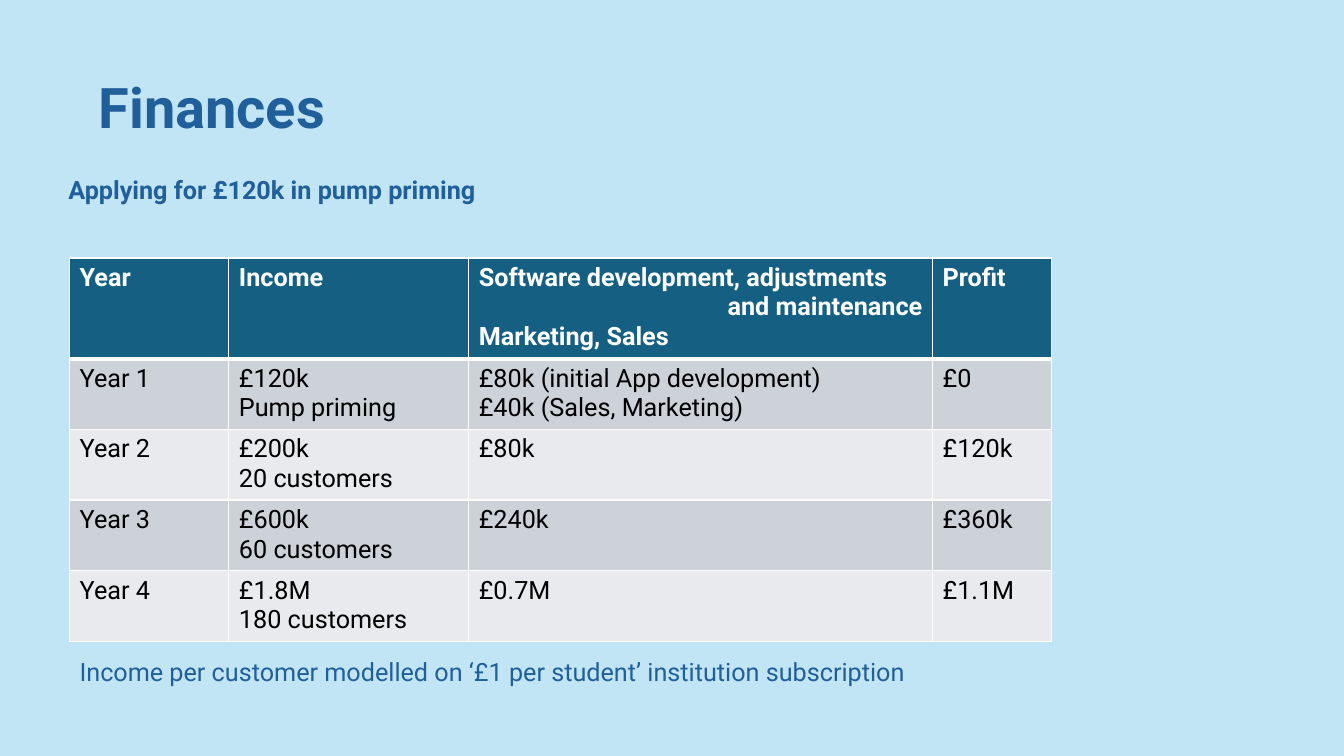
import pptx
import pptx.util
import pptx.dml.color
import pptx.enum.text
import pptx.oxml.ns
from lxml import etree

INK = {
    "sky": "C1E5F5",
    "blue": "215F9A",
    "head": "156082",
    "odd": "CCD2D8",
    "even": "E8EAED",
    "white": "FFFFFF",
    "black": "000000",
}
FONT = "Roboto"
ALIGN = pptx.enum.text.PP_ALIGN
ANCHOR = pptx.enum.text.MSO_ANCHOR

COLS = [11.85, 17.85, 34.51, 8.85]
HEAD_ROW, BODY_ROW = 13.05, 9.14
HEADS = ["Year", "Income",
         "Software development, adjustments\nand maintenance\nMarketing, Sales",
         "Profit"]
YEARS = [
    ["Year 1", "£120k\nPump priming",
     "£80k (initial App development)\n£40k (Sales, Marketing)", "£0"],
    ["Year 2", "£200k\n20 customers", "£80k", "£120k"],
    ["Year 3", "£600k\n60 customers", "£240k", "£360k"],
    ["Year 4", "£1.8M\n180 customers", "£0.7M", "£1.1M"],
]


def tint(name):
    return pptx.dml.color.RGBColor.from_string(INK[name])


def write(frame, text, size=18, color="blue", bold=False, space=None):
    """Put each line of the text in its own paragraph."""
    frame.word_wrap = True
    for i, line in enumerate(text.split("\n")):
        para = frame.paragraphs[0] if i == 0 else frame.add_paragraph()
        para.line_spacing = space
        run = para.add_run()
        run.text = line
        font = run.font
        font.name, font.size, font.bold = FONT, pptx.util.Pt(size), bold
        font.color.rgb = tint(color)


def edge(cell, side, width):
    """Draw one white border; side is L, R, T or B."""
    name = pptx.oxml.ns.qn
    line = etree.SubElement(cell._tc.get_or_add_tcPr(), name(f"a:ln{side}"),
                            w=str(pptx.util.Pt(width)))
    fill = etree.SubElement(line, name("a:solidFill"))
    etree.SubElement(fill, name("a:srgbClr"), val=INK["white"])


class Deck:
    """Holds the slide; all lengths are hundredths of its width or height."""

    def __init__(self):
        self.show = pptx.Presentation()
        self.show.slide_width = pptx.util.Inches(13.33)
        self.show.slide_height = pptx.util.Inches(7.5)
        self.slide = self.show.slides.add_slide(self.show.slide_layouts[6])
        back = self.slide.background.fill
        back.solid()
        back.fore_color.rgb = tint("sky")

    def wide(self, cols):
        return round(self.show.slide_width * cols / 100)

    def high(self, rows):
        return round(self.show.slide_height * rows / 100)

    def area(self, x, y, w, h):
        return self.wide(x), self.high(y), self.wide(w), self.high(h)

    def text(self, box, text, anchor=ANCHOR.TOP, **form):
        frame = self.slide.shapes.add_textbox(*self.area(*box)).text_frame
        frame.vertical_anchor = anchor
        write(frame, text, space=0.9, **form)

    def table(self, x, y, cols, rows, data):
        """Add a table with a dark head row and banded rows below it."""
        box = self.area(x, y, sum(cols), sum(rows))
        grid = self.slide.shapes.add_table(len(rows), len(cols), *box).table
        for col, w in zip(grid.columns, cols):
            col.width = self.wide(w)
        for r, (h, line) in enumerate(zip(rows, data)):
            grid.rows[r].height = self.high(h)
            for c, text in enumerate(line):
                self.cell(grid.cell(r, c), r, text)
        return grid

    def cell(self, cell, row, text):
        head = row == 0
        edges = {"L": 1, "R": 1, "T": 3 if row == 1 else 1, "B": 3 if head else 1}
        for side, width in edges.items():
            edge(cell, side, width)
        cell.fill.solid()
        band = "odd" if row % 2 else "even"
        cell.fill.fore_color.rgb = tint("head" if head else band)
        write(cell.text_frame, text, bold=head, color="white" if head else "black")


def main():
    deck = Deck()
    deck.text((6.6, 4.93, 28, 19.33), "Finances", anchor=ANCHOR.MIDDLE,
              size=40, bold=True)
    deck.text((5.18, 86.67, 63.4, 9.47),
              "Income per customer modelled on ‘£1 per student’ institution subscription")
    rows = [HEAD_ROW] + [BODY_ROW] * len(YEARS)
    grid = deck.table(5.18, 34.13, COLS, rows, [HEADS] + YEARS)
    grid.cell(0, 2).text_frame.paragraphs[1].alignment = ALIGN.RIGHT
    deck.text((4.35, 22.8, 77, 9.47), "Applying for £120k in pump priming", bold=True)
    deck.show.save("out.pptx")


if __name__ == "__main__":
    main()
